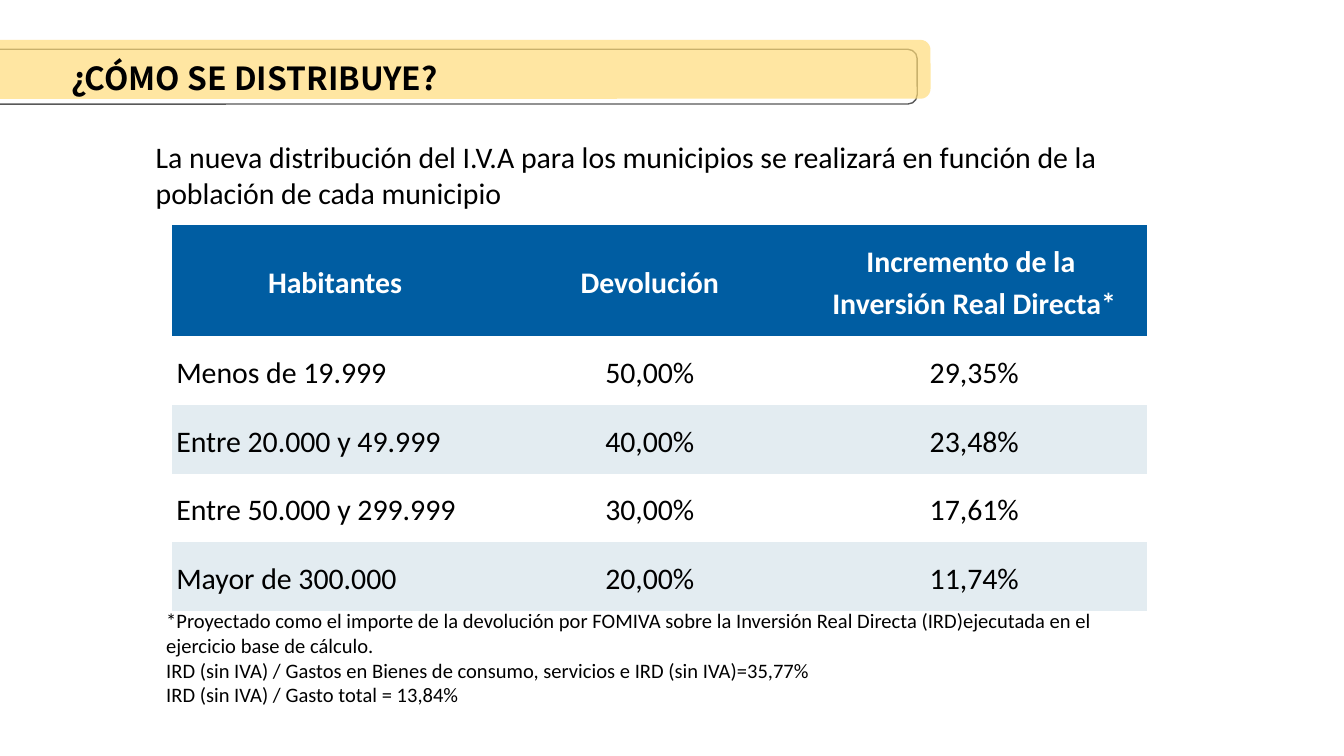
from dataclasses import dataclass
from lxml.etree import SubElement
from pptx import Presentation
from pptx.dml.color import RGBColor as RGB
from pptx.enum.shapes import MSO_SHAPE as Shape
from pptx.enum.text import MSO_ANCHOR as Anchor, PP_ALIGN as Align
from pptx.oxml.ns import qn
from pptx.util import Inches, Pt

WIDE = Inches(10)
HIGH = WIDE * 9 // 16


@dataclass(frozen=True)
class Theme:
    ink: str = "000000"
    white: str = "FFFFFF"
    edge: str = "595959"
    gold: str = "FFDB76"
    blue: str = "005DA2"
    pale: str = "E3ECF1"
    head: str = "Noto Sans CJK TC"
    body: str = "Calibri"
    title: int = 17
    text: int = 16
    note: int = 11


THEME = Theme()

GRID = [
    ["Habitantes", "Devolución", "Incremento de la \nInversión Real Directa*"],
    ["Menos de 19.999", "50,00%", "29,35%"],
    ["Entre 20.000 y 49.999", "40,00%", "23,48%"],
    ["Entre 50.000 y 299.999", "30,00%", "17,61%"],
    ["Mayor de 300.000", "20,00%", "11,74%"],
]
COLS = [24.22, 22.63, 25.65]
TOP_ROW, ROW = 14.7, 9.08

INTRO = ("La nueva distribución del I.V.A para los municipios se realizará "
         "en función de la población de cada municipio")
NOTES = "\n".join([
    "*Proyectado como el importe de la devolución por FOMIVA sobre la "
    "Inversión Real Directa (IRD)ejecutada en el ejercicio base de cálculo.",
    "IRD (sin IVA) / Gastos en Bienes de consumo, servicios e IRD (sin IVA)=35,77%",
    "IRD (sin IVA) / Gasto total = 13,84%",
])


def across(share):
    """Percent of the slide's width."""
    return round(WIDE * share / 100)


def down(share):
    """Percent of the slide's height."""
    return round(HIGH * share / 100)


def place(x, y, w, h):
    return across(x), down(y), across(w), down(h)


def assign(item, values):
    for name, value in values.items():
        setattr(item, name, value)


def paint(fill, color):
    fill.solid()
    fill.fore_color.rgb = RGB.from_string(color)


def write(frame, text, size, color=THEME.ink, face=THEME.body, bold=False, **form):
    """Fill a text frame, one paragraph a line; form holds paragraph settings."""
    frame.text = text
    for para in frame.paragraphs:
        assign(para, form)
        for run in para.runs:
            assign(run.font, dict(size=Pt(size), name=face, bold=bold))
            run.font.color.rgb = RGB.from_string(color)


def add_bar(slide, box, fill=None, alpha=100, line=None):
    bar = slide.shapes.add_shape(Shape.ROUNDED_RECTANGLE, *place(*box))
    bar.shadow.inherit = False
    bar.adjustments[0] = 0.17
    if fill:
        paint(bar.fill, fill)
        tint = bar.fill._xPr.find(".//" + qn("a:srgbClr"))
        SubElement(tint, qn("a:alpha"), val=str(alpha * 1000))
    else:
        bar.fill.background()
    if line:
        paint(bar.line.fill, line)
        bar.line.width = Pt(0.75)
    else:
        bar.line.fill.background()


def add_text(slide, box, text, size, **style):
    frame = slide.shapes.add_textbox(*place(*box)).text_frame
    pad = Inches(0.1)
    assign(frame, dict(word_wrap=True, margin_left=pad, margin_right=pad,
                       margin_top=pad, margin_bottom=pad))
    write(frame, text, size, **style)


def clear_edges(cell):
    """Hide the four borders; they must come before the cell's fill."""
    props = cell._tc.get_or_add_tcPr()
    for spot, side in enumerate("LRTB"):
        edge = SubElement(props, qn(f"a:ln{side}"))
        SubElement(edge, qn("a:noFill"))
        props.insert(spot, edge)


def fill_cell(cell, text, row, col):
    top = row == 0
    side, pad = Inches(0.03), Inches(0.1)
    assign(cell, dict(margin_left=side, margin_right=side,
                      margin_top=pad, margin_bottom=pad,
                      vertical_anchor=Anchor.MIDDLE if top else Anchor.BOTTOM))
    clear_edges(cell)
    if top:
        paint(cell.fill, THEME.blue)
    elif row % 2 == 0:
        paint(cell.fill, THEME.pale)
    else:
        cell.fill.background()
    write(cell.text_frame, text, THEME.text, bold=top,
          color=THEME.white if top else THEME.ink, line_spacing=1.15,
          alignment=Align.CENTER if top or col else Align.LEFT)


def add_grid(slide, x, y):
    high = TOP_ROW + ROW * (len(GRID) - 1)
    table = slide.shapes.add_table(len(GRID), len(COLS),
                                   *place(x, y, sum(COLS), high)).table
    assign(table, dict(first_row=False, horz_banding=False))
    for col, share in zip(table.columns, COLS):
        col.width = across(share)
    for r, texts in enumerate(GRID):
        table.rows[r].height = down(ROW if r else TOP_ROW)
        for c, text in enumerate(texts):
            fill_cell(table.cell(r, c), text, r, c)


def main():
    deck = Presentation()
    assign(deck, dict(slide_width=WIDE, slide_height=HIGH))
    slide = deck.slides.add_slide(deck.slide_layouts[6])
    add_bar(slide, (-2.9, 6.52, 71.15, 7.25), line=THEME.edge)
    add_bar(slide, (-1.5, 5.28, 70.74, 7.8), fill=THEME.gold, alpha=68)
    add_text(slide, (4.3, 6.04, 59.9, 7.3), "¿CÓMO SE DISTRIBUYE?",
             THEME.title, face=THEME.head, bold=True)
    add_text(slide, (10.6, 16.62, 78.1, 12.44), INTRO, THEME.text)
    add_grid(slide, 12.82, 29.78)
    add_text(slide, (11.38, 78.7, 75.8, 19.2), NOTES, THEME.note)
    deck.save("out.pptx")


if __name__ == "__main__":
    main()
